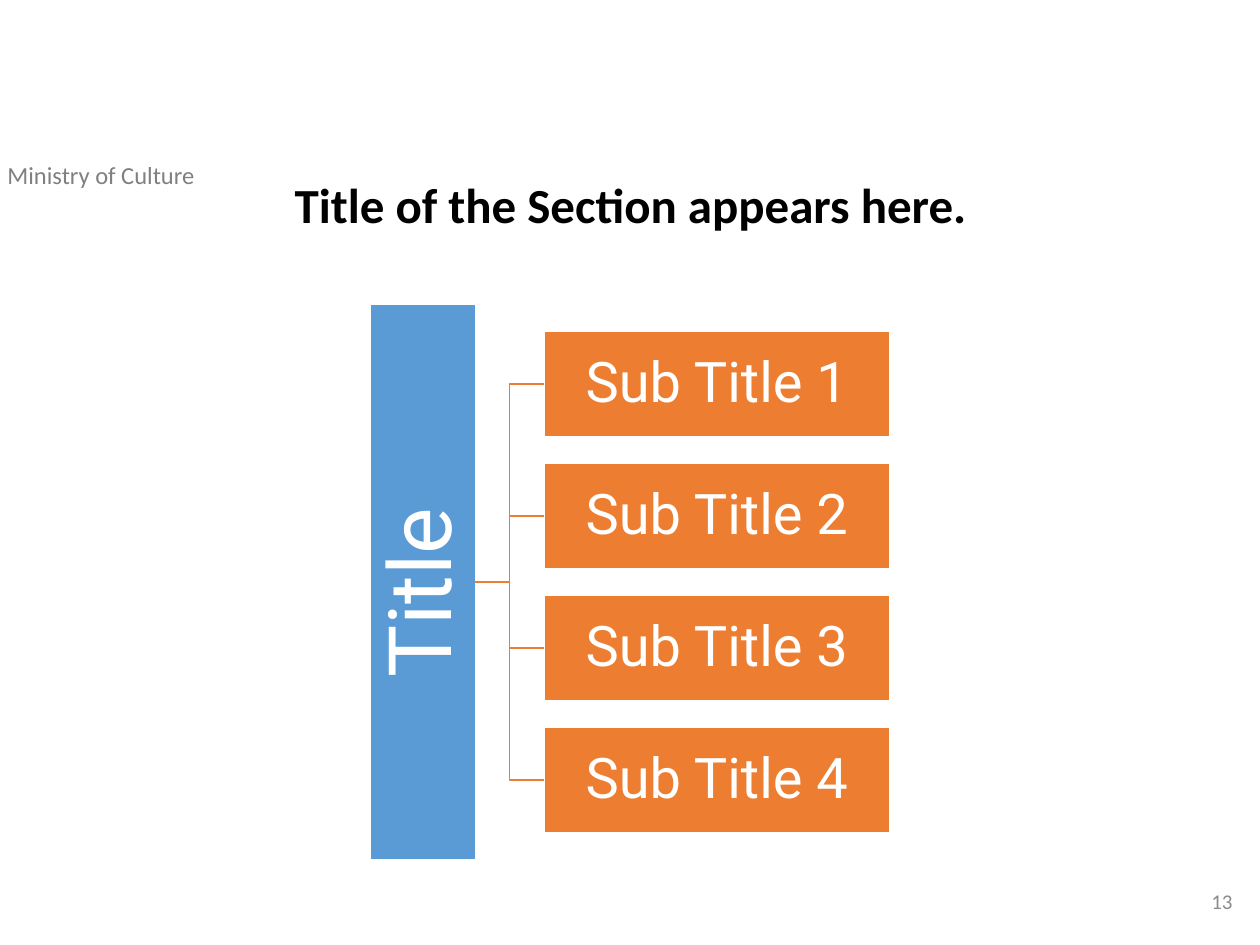
from pptx import Presentation, util as u
from pptx.dml.color import RGBColor
from pptx.enum import shapes, text
from pptx.oxml.ns import qn
from lxml import etree

BLUE = RGBColor(0x5B, 0x9B, 0xD5)
ORANGE = RGBColor(0xED, 0x7D, 0x31)
WHITE = RGBColor(0xFF, 0xFF, 0xFF)
BLACK = RGBColor(0x00, 0x00, 0x00)
GREY = RGBColor(0x80, 0x80, 0x80)
PALE_GREY = RGBColor(0x8C, 0x8C, 0x8C)

PX_PER_INCH = 126

# Hierarchy grid, in px
BAR_LENGTH, BAR_CENTER, BAR_RIGHT = 556, 423, 475
ROW_LEFT, ROW_TOP, ROW_WIDTH, ROW_HEIGHT, ROW_PITCH = 544, 331, 346, 106, 132
SUBTITLES = [f"Sub Title {number}" for number in range(1, 5)]
MIDDLE = ROW_TOP + ((len(SUBTITLES) - 1) * ROW_PITCH + ROW_HEIGHT) // 2


def px(length):
    return u.Emu(round(length * u.Inches(1) / PX_PER_INCH))


def write(shape, words, *, size, color, font="Calibri", bold=False,
          align=text.PP_ALIGN.LEFT, anchor=text.MSO_ANCHOR.TOP,
          spacing=1.0, inset=None):
    frame = shape.text_frame
    frame.word_wrap = True
    frame.auto_size = text.MSO_AUTO_SIZE.NONE
    frame.vertical_anchor = anchor
    if inset is not None:
        frame.margin_left = frame.margin_right = px(inset)
        frame.margin_top = frame.margin_bottom = px(inset)
    para = frame.paragraphs[0]
    para.alignment = align
    para.line_spacing = spacing
    span = para.add_run()
    span.text = words
    span.font.name = font
    span.font.size = u.Pt(size)
    span.font.bold = bold
    span.font.color.rgb = color


def add_label(page, left, top, width, height, words, **style):
    box = page.shapes.add_textbox(px(left), px(top), px(width), px(height))
    write(box, words, **style)


def add_block(page, left, top, width, height, fill, words, *, size, inset):
    block = page.shapes.add_shape(shapes.MSO_SHAPE.RECTANGLE,
                                  px(left), px(top), px(width), px(height))
    block.shadow.inherit = False
    block.fill.solid()
    block.fill.fore_color.rgb = fill
    block.line.color.rgb = WHITE
    block.line.width = u.Pt(1)
    write(block, words, size=size, color=WHITE, font="Roboto", inset=inset,
          align=text.PP_ALIGN.CENTER, anchor=text.MSO_ANCHOR.MIDDLE, spacing=0.9)
    return block


def add_branch(page, row, row_middle):
    branch = page.shapes.add_connector(
        shapes.MSO_CONNECTOR.ELBOW,
        px(BAR_RIGHT), px(MIDDLE), px(ROW_LEFT), px(row_middle))
    branch.end_connect(row, 1)
    branch.line.color.rgb = ORANGE
    branch.line.width = u.Pt(1)
    etree.SubElement(branch.element.spPr, qn("a:effectLst"))


def add_title(page, words):
    title = page.shapes.title
    title.left, title.top, title.width, title.height = map(px, (282, 175, 814, 100))
    write(title, words, size=28, color=BLACK, bold=True, spacing=0.9)


def add_hierarchy(page):
    # Turned title bar
    bar = add_block(page, BAR_CENTER - BAR_LENGTH // 2, MIDDLE - ROW_HEIGHT // 2,
                    BAR_LENGTH, ROW_HEIGHT, BLUE, "Title ", size=50, inset=4)
    bar.rotation = 270

    # Subtitle rows and their branches
    for index, words in enumerate(SUBTITLES):
        top = ROW_TOP + index * ROW_PITCH
        row = add_block(page, ROW_LEFT, top, ROW_WIDTH, ROW_HEIGHT, ORANGE, words,
                        size=32, inset=3)
        add_branch(page, row, top + ROW_HEIGHT // 2)


def main():
    deck = Presentation()
    deck.slide_width, deck.slide_height = u.Inches(10), u.Inches(7.5)
    page = deck.slides.add_slide(deck.slide_layouts[5])

    # Header and page number
    add_title(page, "Title of the Section appears here.")
    add_label(page, -5, 154, 365, 43, "Ministry of Culture", size=14, color=GREY)
    add_label(page, 961, 876, 284, 50, "13", size=12, color=PALE_GREY,
              align=text.PP_ALIGN.RIGHT, anchor=text.MSO_ANCHOR.MIDDLE)

    add_hierarchy(page)
    deck.save("out.pptx")


if __name__ == "__main__":
    main()
